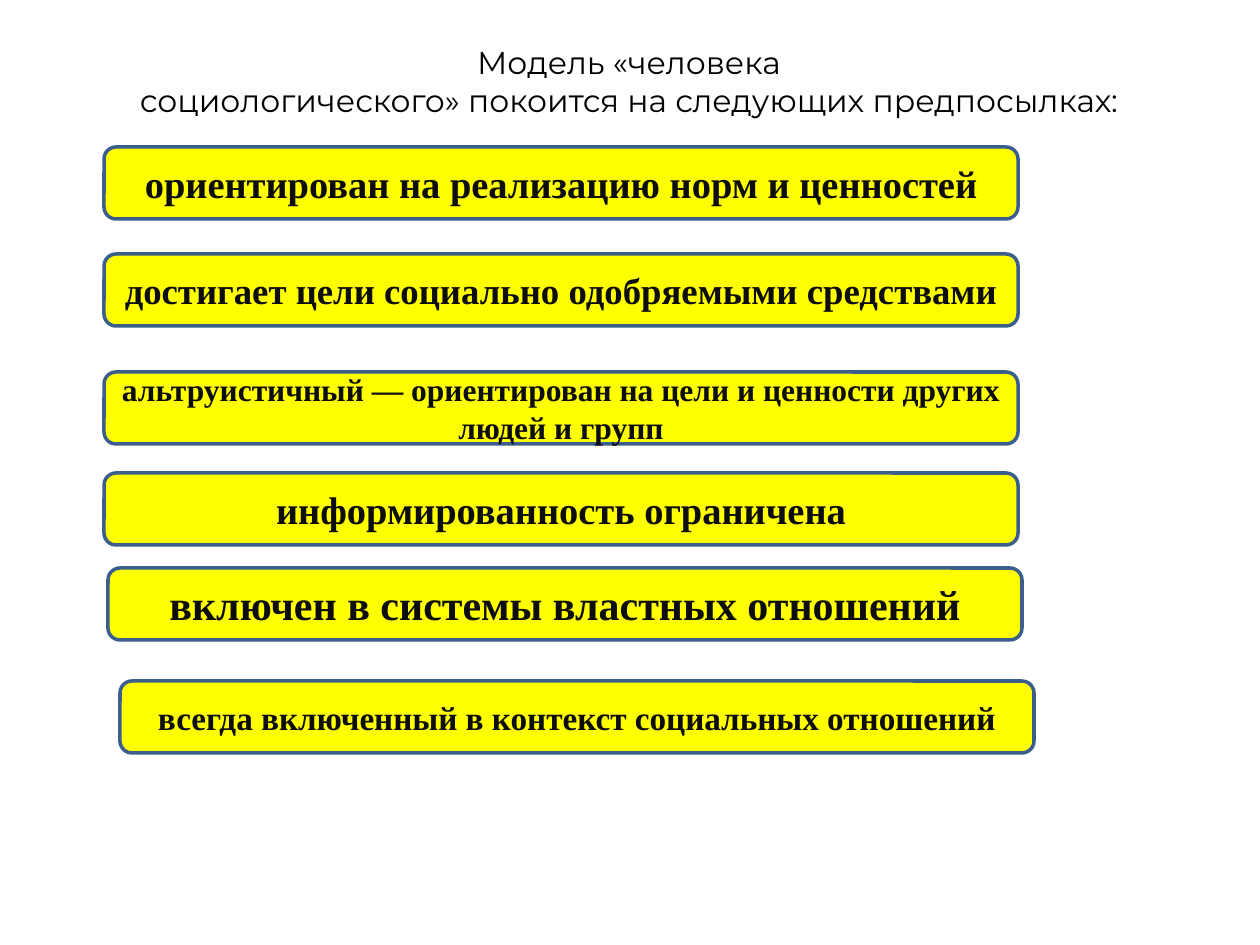
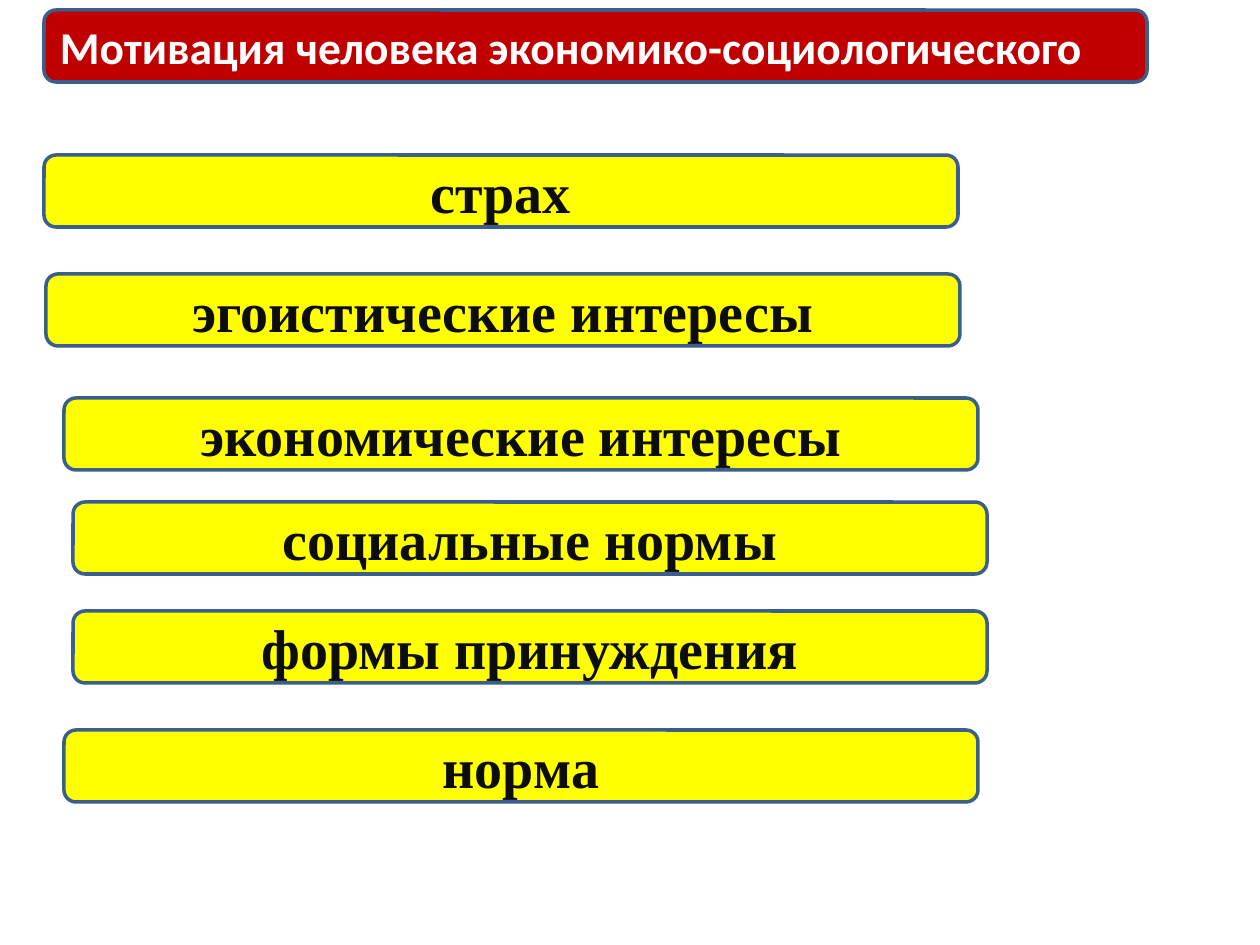
from pptx import Presentation
from pptx.dml.color import RGBColor
from pptx.enum.shapes import MSO_SHAPE
from pptx.enum.text import MSO_ANCHOR, MSO_AUTO_SIZE, PP_ALIGN
from pptx.util import Emu, Pt

ROUNDED = MSO_SHAPE.ROUNDED_RECTANGLE
MIDDLE = MSO_ANCHOR.MIDDLE
GROW = MSO_AUTO_SIZE.SHAPE_TO_FIT_TEXT
LEFT, CENTER = PP_ALIGN.LEFT, PP_ALIGN.CENTER

PX_PER_INCH = 126
SLIDE_SIZE = (1260, 945)
BAR_SIZE = (914, 72)

YELLOW, RED, BORDER = "FFFF00", "C00000", "3A5F8C"
INK, BLACK, WHITE = "0D0D0D", "000000", "FFFFFF"
HEADING_FONT, BANNER_FONT, BAR_FONT = "Montserrat", "Calibri", "Times New Roman"

PREMISES_TITLE = ["Модель «человека", "социологического» покоится на следующих предпосылках:"]
PREMISES = [
    (0, 0, 22, "ориентирован на реализацию норм и ценностей"),
    (0, 107, 21, "достигает цели социально одобряемыми средствами"),
    (0, 225, 18, "альтруистичный — ориентирован на цели и ценности других людей и групп"),
    (0, 326, 22, "информированность ограничена"),
    (4, 421, 24, "включен в системы властных отношений"),
    (16, 534, 19, "всегда включенный в контекст социальных отношений"),
]

MOTIVES_TITLE = "Мотивация человека экономико-социологического"
MOTIVES = [
    (0, 0, 32, "страх"),
    (2, 119, 32, "эгоистические интересы"),
    (20, 243, 32, "экономические интересы"),
    (29, 347, 32, "социальные нормы"),
    (29, 456, 32, "формы принуждения"),
    (20, 575, 32, "норма"),
]


def px(length):
    """Turn pixels into EMU."""
    return Emu(round(length * 914400 / PX_PER_INCH))


def color(code):
    """Turn a hex string into a colour."""
    return RGBColor.from_string(code)


def write(frame, lines, font, size, ink, align, bold):
    """Write one paragraph per line into a text frame."""
    frame.word_wrap = True
    for index, line in enumerate(lines):
        paragraph = frame.paragraphs[0] if index == 0 else frame.add_paragraph()
        paragraph.alignment = align
        run = paragraph.add_run()
        run.text = line
        run.font.name = font
        run.font.size = Pt(size)
        run.font.bold = bold
        run.font.color.rgb = color(ink)


def heading(slide, box, lines):
    """Add a plain centred heading."""
    frame = slide.shapes.add_textbox(*map(px, box)).text_frame
    write(frame, lines, HEADING_FONT, 18, BLACK, CENTER, False)
    frame.auto_size = GROW


def bar(slide, box, text, size, fill=YELLOW, ink=INK, font=BAR_FONT, align=CENTER):
    """Add a rounded, outlined bar with bold text."""
    plate = slide.shapes.add_shape(ROUNDED, *map(px, box))
    plate.shadow.inherit = False
    plate.fill.solid()
    plate.fill.fore_color.rgb = color(fill)
    plate.line.color.rgb = color(BORDER)
    plate.line.width = Pt(2)
    plate.text_frame.vertical_anchor = MIDDLE
    write(plate.text_frame, [text], font, size, ink, align, True)


def bar_stack(slide, origin, entries):
    """Add bars at their offsets from the origin of the stack."""
    left, top = origin
    for shift, drop, size, text in entries:
        bar(slide, (left + shift, top + drop, *BAR_SIZE), text, size)


def premises_slide(slide):
    """Build the slide on the premises of the model."""
    heading(slide, (54, 37, 1150, 89), PREMISES_TITLE)
    bar_stack(slide, (104, 147), PREMISES)


def motives_slide(slide):
    """Build the slide on motivation."""
    bar(slide, (44, 10, 1103, 72), MOTIVES_TITLE, 26, RED, WHITE, BANNER_FONT, LEFT)
    bar_stack(slide, (44, 155), MOTIVES)


def main():
    """Build and save the presentation."""
    deck = Presentation()
    deck.slide_width, deck.slide_height = map(px, SLIDE_SIZE)
    for build in (premises_slide, motives_slide):
        build(deck.slides.add_slide(deck.slide_layouts[6]))
    deck.save("out.pptx")


if __name__ == "__main__":
    main()
